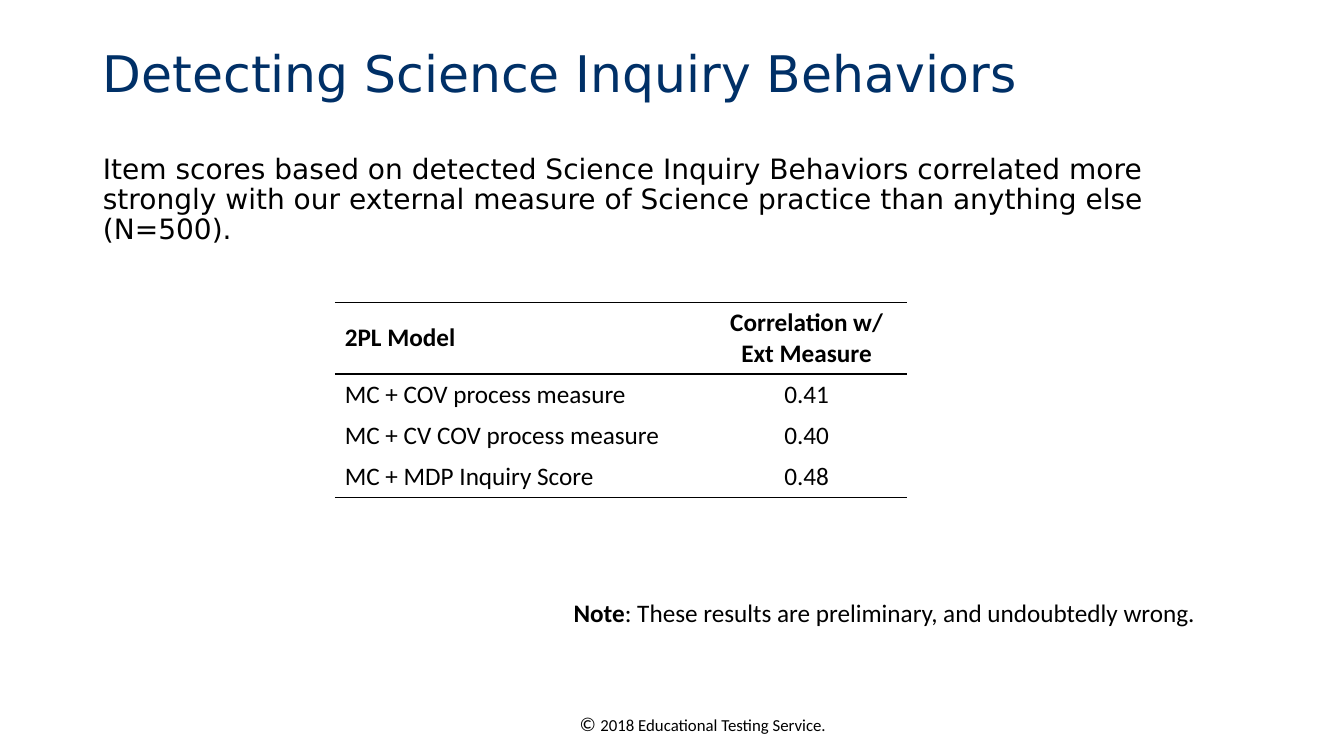
import pptx
import pptx.dml.color
import pptx.enum.text
import pptx.oxml
import pptx.oxml.ns
import pptx.util

Inches = pptx.util.Inches
Pt = pptx.util.Pt
Align = pptx.enum.text.PP_ALIGN
Anchor = pptx.enum.text.MSO_ANCHOR
NO_STYLE = "{2D5ABB26-0587-4C30-8999-92F81FD0307C}"


def shade(code):
    return pptx.dml.color.RGBColor.from_string(code)


class Deck:
    """Hold the style and the current slide, and add elements to it."""

    head = "DejaVu Sans"
    text = "Calibri"
    ink = "000000"
    navy = "003067"

    def __init__(self):
        self.file = pptx.Presentation()
        self.file.slide_width = Inches(13.33)
        self.file.slide_height = Inches(7.5)
        self.slide = self.file.slides.add_slide(self.file.slide_layouts[1])

    def run(self, para, words, size, font=None, tint=None, bold=False):
        run = para.add_run()
        run.text = words
        run.font.size = Pt(size)
        run.font.name = font or self.text
        run.font.bold = bold
        run.font.color.rgb = shade(tint or self.ink)

    def holder(self, index, box, words, size, tint, anchor):
        shape = self.slide.placeholders[index]
        shape.left, shape.top, shape.width, shape.height = map(Inches, box)
        frame = shape.text_frame
        frame.word_wrap = True
        frame.auto_size = pptx.enum.text.MSO_AUTO_SIZE.NONE
        frame.vertical_anchor = anchor
        para = frame.paragraphs[0]
        props = para._p.get_or_add_pPr()
        props.set("marL", "0")
        props.set("indent", "0")
        props.append(pptx.oxml.parse_xml(f'<a:buNone {pptx.oxml.ns.nsdecls("a")}/>'))
        para.alignment = Align.LEFT
        para.line_spacing = 0.9
        para.space_before = Pt(0)
        self.run(para, words, size, self.head, tint)

    def label(self, box, parts):
        frame = self.slide.shapes.add_textbox(*map(Inches, box)).text_frame
        frame.word_wrap = True
        for words, size, bold in parts:
            self.run(frame.paragraphs[0], words, size, bold=bold)

    def rule(self, cell, side):
        cell._tc.get_or_add_tcPr().append(pptx.oxml.parse_xml(
            f'<a:ln{side} {pptx.oxml.ns.nsdecls("a")} w="12700"><a:solidFill>'
            f'<a:srgbClr val="{self.ink}"/></a:solidFill></a:ln{side}>'))

    def table(self, box, widths, heights, rows):
        frame = self.slide.shapes.add_table(len(rows), len(widths), *map(Inches, box))
        grid = frame.table
        grid.first_row = grid.horz_banding = False
        frame._element.xpath(".//a:tableStyleId")[0].text = NO_STYLE
        for col, width in zip(grid.columns, widths):
            col.width = Inches(width)
        for row, height in zip(grid.rows, heights):
            row.height = Inches(height)
        for r, row in enumerate(rows):
            for c, words in enumerate(row):
                cell = grid.cell(r, c)
                if r == 0:
                    self.rule(cell, "T")
                if r in (0, len(rows) - 1):
                    self.rule(cell, "B")
                cell.fill.background()
                cell.vertical_anchor = Anchor.MIDDLE if r == 0 else Anchor.TOP
                para = cell.text_frame.paragraphs[0]
                para.alignment = Align.CENTER if c else Align.LEFT
                self.run(para, words, 18, bold=r == 0)


def main():
    deck = Deck()
    deck.label((5.65, 7.01, 3.05, 0.34),
               [("© ", 14, False), ("2018 Educational Testing Service.", 12, False)])
    deck.holder(0, (0.92, 0.2, 11.5, 1.12), "Detecting Science Inquiry Behaviors",
                36, deck.navy, Anchor.MIDDLE)
    deck.holder(1, (0.92, 1.49, 11.5, 1.04),
                "Item scores based on detected Science Inquiry Behaviors correlated more "
                "strongly with our external measure of Science practice than anything "
                "else (N=500).", 20, deck.ink, Anchor.TOP)
    deck.table((3.32, 3, 5.68, 1.92), (3.68, 2), (0.71, 0.41, 0.41, 0.41), [
        ("2PL Model", "Correlation w/ Ext Measure"),
        ("MC + COV process measure", "0.41"),
        ("MC + CV COV process measure", "0.40"),
        ("MC + MDP Inquiry Score", "0.48"),
    ])
    deck.label((5.59, 5.88, 6.82, 0.4),
               [("Note", 18, True),
                (": These results are preliminary, and undoubtedly wrong.", 18, False)])
    deck.file.save("out.pptx")


if __name__ == "__main__":
    main()
